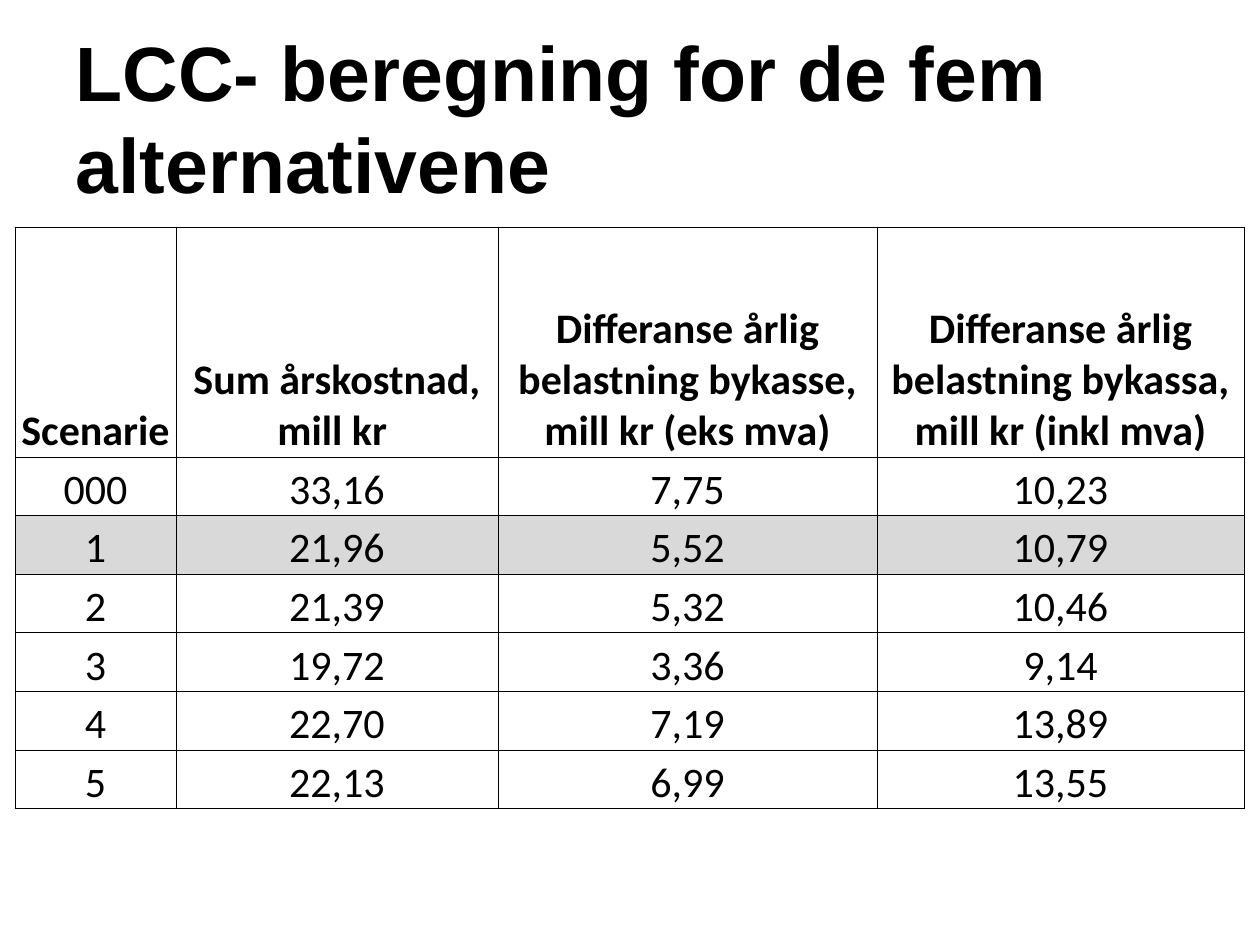
from dataclasses import dataclass

from lxml import etree
from pptx import Presentation
from pptx.dml.color import RGBColor
from pptx.enum.text import MSO_ANCHOR, PP_ALIGN
from pptx.oxml.ns import qn
from pptx.util import Pt

LEFT, CENTER = PP_ALIGN.LEFT, PP_ALIGN.CENTER
MIDDLE, BOTTOM = MSO_ANCHOR.MIDDLE, MSO_ANCHOR.BOTTOM
EMU_PER_PX = 914400 / 126
TITLE_ONLY = 5


@dataclass(frozen=True)
class Theme:
    ink: str = "000000"
    highlight: str = "D9D9D9"
    title_font: str = "Arial"
    table_font: str = "Calibri"
    title_size: int = 44
    table_size: int = 24
    border_width: float = 0.5


THEME = Theme()

TITLE = "LCC- beregning for de fem alternativene"
HEADERS = [
    "Scenarie",
    "Sum årskostnad,\nmill kr ",
    "Differanse årlig belastning bykasse, mill kr (eks mva)",
    "Differanse årlig belastning bykassa, mill kr (inkl mva)",
]
SCENARIOS = [
    ["000", "33,16", "7,75", "10,23"],
    ["1", "21,96", "5,52", "10,79"],
    ["2", "21,39", "5,32", "10,46"],
    ["3", "19,72", "3,36", "9,14"],
    ["4", "22,70", "7,19", "13,89"],
    ["5", "22,13", "6,99", "13,55"],
]
HIGHLIGHTED_SCENARIO = "1"
COLUMN_WIDTHS = [161, 322, 379, 367]
HEADER_HEIGHT = 230


def px(length):
    return round(length * EMU_PER_PX)


def write_text(text_frame, text, *, font, size, bold=False, align=LEFT):
    """Write one paragraph for each line of text."""
    text_frame.text = text
    for paragraph in text_frame.paragraphs:
        paragraph.alignment = align
        for run in paragraph.runs:
            run.font.name = font
            run.font.size = Pt(size)
            run.font.bold = bold
            run.font.color.rgb = RGBColor.from_string(THEME.ink)


def add_borders(cell):
    properties = cell._tc.get_or_add_tcPr()
    for side in ("a:lnL", "a:lnR", "a:lnT", "a:lnB"):
        line = etree.SubElement(properties, qn(side), w=str(Pt(THEME.border_width)))
        fill = etree.SubElement(line, qn("a:solidFill"))
        etree.SubElement(fill, qn("a:srgbClr"), val=THEME.ink)


def format_cell(cell, text, *, bold, highlighted):
    cell.margin_left = cell.margin_right = cell.margin_top = px(1)
    cell.margin_bottom = 0
    cell.vertical_anchor = BOTTOM
    # Borders come before the fill in the cell properties
    add_borders(cell)
    if highlighted:
        cell.fill.solid()
        cell.fill.fore_color.rgb = RGBColor.from_string(THEME.highlight)
    else:
        cell.fill.background()
    write_text(cell.text_frame, text, font=THEME.table_font,
               size=THEME.table_size, bold=bold, align=CENTER)


def place_title(slide, left, top, width, height):
    title = slide.shapes.title
    title.left, title.top = px(left), px(top)
    title.width, title.height = px(width), px(height)
    title.text_frame.word_wrap = True
    title.text_frame.vertical_anchor = MIDDLE
    write_text(title.text_frame, TITLE, font=THEME.title_font,
               size=THEME.title_size, bold=True)


def place_cost_table(slide, left, top, width, height):
    rows = [HEADERS] + SCENARIOS
    table = slide.shapes.add_table(
        len(rows), len(HEADERS), px(left), px(top), px(width), px(height)).table
    table.horz_banding = False

    # Columns share the width in proportion; scenarios share the space below the header
    for column, share in zip(table.columns, COLUMN_WIDTHS):
        column.width = px(width * share / sum(COLUMN_WIDTHS))
    row_height = (height - HEADER_HEIGHT) / len(SCENARIOS)
    for index, values in enumerate(rows):
        is_header = index == 0
        table.rows[index].height = px(HEADER_HEIGHT if is_header else row_height)
        for cell, text in zip(table.rows[index].cells, values):
            format_cell(cell, text, bold=is_header,
                        highlighted=values[0] == HIGHLIGHTED_SCENARIO)


def main():
    presentation = Presentation()
    presentation.slide_width, presentation.slide_height = px(1260), px(945)
    slide = presentation.slides.add_slide(presentation.slide_layouts[TITLE_ONLY])
    place_title(slide, 63, 38, 1134, 158)
    place_cost_table(slide, 15, 227, 1229, 582)
    presentation.save("out.pptx")


if __name__ == "__main__":
    main()
